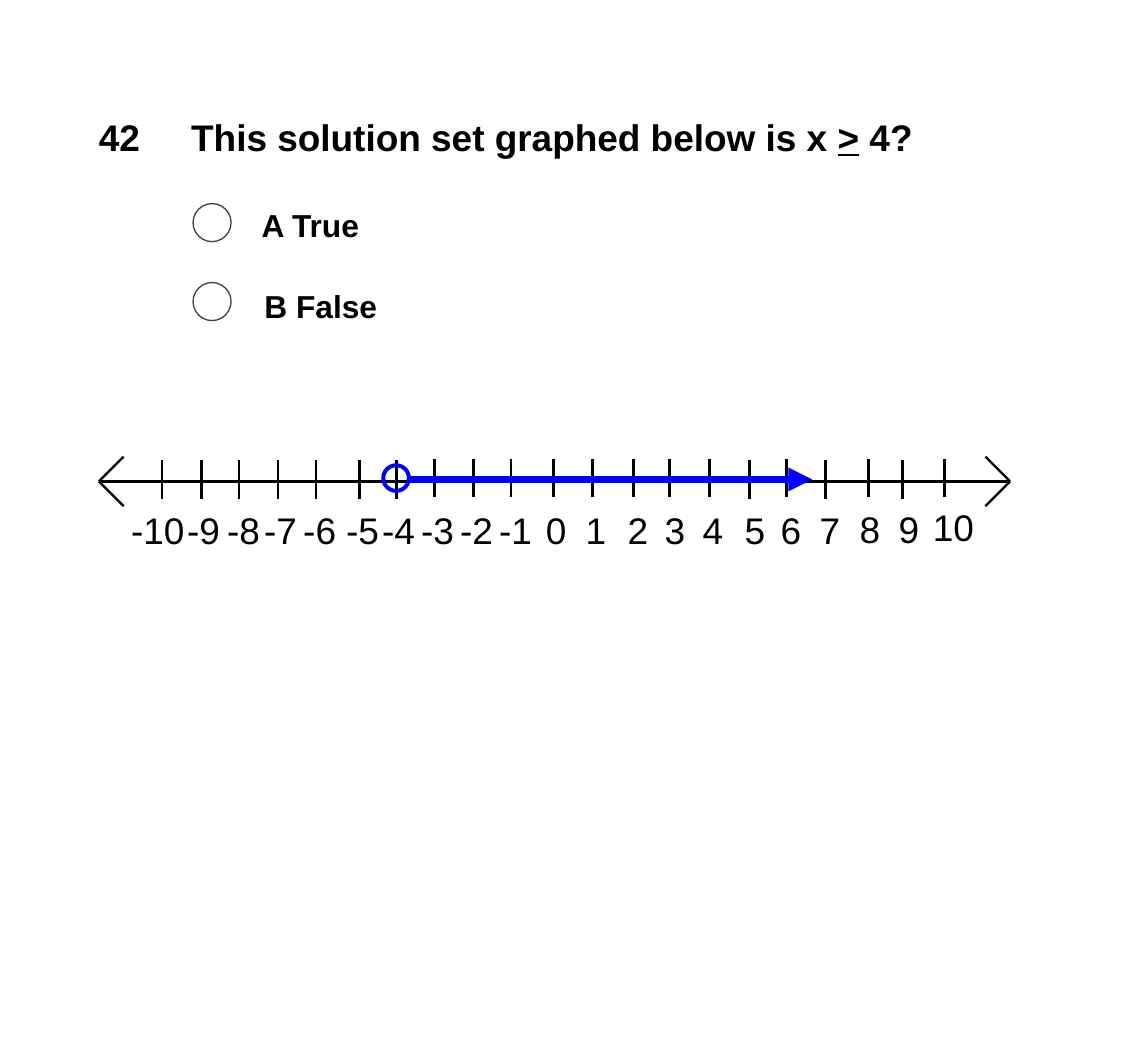
from lxml.etree import SubElement
from pptx import Presentation
from pptx.dml.color import RGBColor
from pptx.enum.shapes import MSO_CONNECTOR, MSO_SHAPE
from pptx.enum.text import MSO_ANCHOR, PP_ALIGN
from pptx.oxml.ns import qn
from pptx.util import Inches, Pt

# Content
QUESTION_NUMBER = "42"
QUESTION = [("This solution set graphed below is x ", False), (">", True), (" 4?", False)]
ANSWERS = [  # text, text left, text top, button top
    ("A True", 2.63, 2.1, 2.14),
    ("B False", 2.66, 2.95, 2.97),
]
FIRST_NUMBER = -10
TICK_X = [1.7, 2.12, 2.51, 2.92, 3.32, 3.78, 4.17, 4.57, 4.98, 5.37, 5.82,
          6.23, 6.66, 7.04, 7.46, 7.88, 8.27, 8.68, 9.13, 9.49, 9.93]
LABEL_LEFT = [1.28, 1.87, 2.29, 2.68, 3.09, 3.54, 3.92, 4.33, 4.74, 5.15, 5.64,
              6.06, 6.5, 6.89, 7.29, 7.73, 8.11, 8.52, 8.94, 9.35, 9.71]
LOWER_TICKS = {-10, -9, -8, -7, -6, -5, -4, 5, 7, 9}
RAISED_LABELS = {8: 5.27, 9: 5.27, 10: 5.25}
AXIS_LEFT, AXIS_RIGHT, AXIS_Y = 1.04, 10.62, 5.06
HEAD = 0.26
COLORS = {"ink": "000000", "solution": "0000FF", "button": "404040", "paper": "FFFFFF"}


def color(name):
    return RGBColor.from_string(COLORS[name])


def write(box, runs, size=28, bold=False, inset=(0.1, 0.05)):
    frame = box.text_frame
    frame.word_wrap = True
    frame.vertical_anchor = MSO_ANCHOR.TOP
    frame.margin_left = frame.margin_right = Inches(inset[0])
    frame.margin_top = frame.margin_bottom = Inches(inset[1])
    paragraph = frame.paragraphs[0]
    paragraph.alignment = PP_ALIGN.LEFT
    paragraph.line_spacing = 1.0
    paragraph.space_before = Pt(0)
    for text, underlined in runs:
        run = paragraph.add_run()
        run.text = text
        font = run.font
        font.name, font.size, font.bold = "Arial", Pt(size), bold
        font.underline = underlined
        font.color.rgb = color("ink")


def add_text(text, left, top, width, height, **text_format):
    box = slide.shapes.add_textbox(Inches(left), Inches(top), Inches(width), Inches(height))
    write(box, [(text, False)], **text_format)


def add_line(x1, y1, x2, y2, ink="ink", weight=1.75):
    line = slide.shapes.add_connector(
        MSO_CONNECTOR.STRAIGHT, Inches(x1), Inches(y1), Inches(x2), Inches(y2))
    line.line.color.rgb = color(ink)
    line.line.width = Pt(weight)
    SubElement(line.element.spPr, qn("a:effectLst"))
    return line


def add_circle(left, top, size, ink, weight, fill=None):
    circle = slide.shapes.add_shape(
        MSO_SHAPE.OVAL, Inches(left), Inches(top), Inches(size), Inches(size))
    circle.shadow.inherit = False
    if fill:
        circle.fill.solid()
        circle.fill.fore_color.rgb = color(fill)
    else:
        circle.fill.background()
    circle.line.color.rgb = color(ink)
    circle.line.width = Pt(weight)


presentation = Presentation()
presentation.slide_width, presentation.slide_height = Inches(12.07), Inches(11.11)
slide = presentation.slides.add_slide(presentation.slide_layouts[5])

# Question
question = slide.shapes.title
question.left, question.top = Inches(1.89), Inches(1.14)
question.width, question.height = Inches(8.48), Inches(0.59)
write(question, QUESTION, bold=True, inset=(0.12, 0.06))
add_text(QUESTION_NUMBER, 0.92, 1.14, 0.9, 0.59, bold=True, inset=(0.12, 0.06))

# Answers with their buttons
for answer, left, top, button_top in ANSWERS:
    add_text(answer, left, top, 2.5, 0.52, size=24, bold=True, inset=(0.12, 0.06))
    add_circle(2.03, button_top, 0.4, "button", 1, fill="paper")

# Number line with open arrowheads
add_line(AXIS_LEFT, AXIS_Y, AXIS_RIGHT, AXIS_Y)
for tip, inward in ((AXIS_LEFT, HEAD), (AXIS_RIGHT, -HEAD)):
    for rise in (-HEAD, HEAD):
        add_line(tip, AXIS_Y, tip + inward, AXIS_Y + rise)

# Ticks and their numbers
for number, (tick_x, label_left) in enumerate(zip(TICK_X, LABEL_LEFT), FIRST_NUMBER):
    tick_top = 4.84 if number in LOWER_TICKS else 4.82
    add_line(tick_x, tick_top, tick_x, tick_top + 0.4)
    label_width = 0.82 if abs(number) == 10 else 0.6
    add_text(str(number), label_left, RAISED_LABELS.get(number, 5.29), label_width, 0.57)

# Graphed solution
ray = add_line(4.31, 5.04, 8.54, 5.04, ink="solution", weight=6)
SubElement(ray.line._get_or_add_ln(), qn("a:tailEnd"), type="triangle")
add_circle(4.03, 4.89, 0.27, "solution", 3)

presentation.save("out.pptx")
